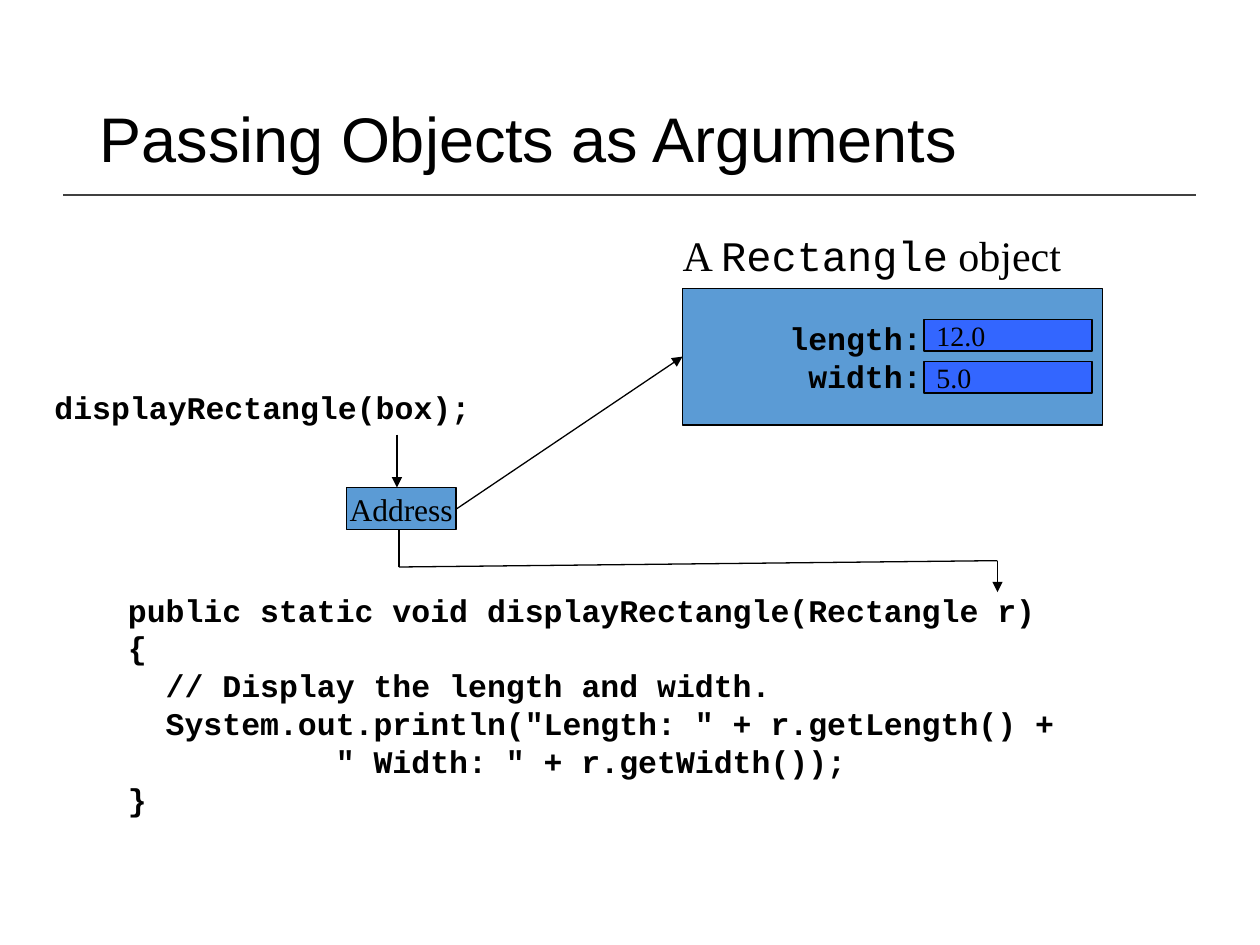
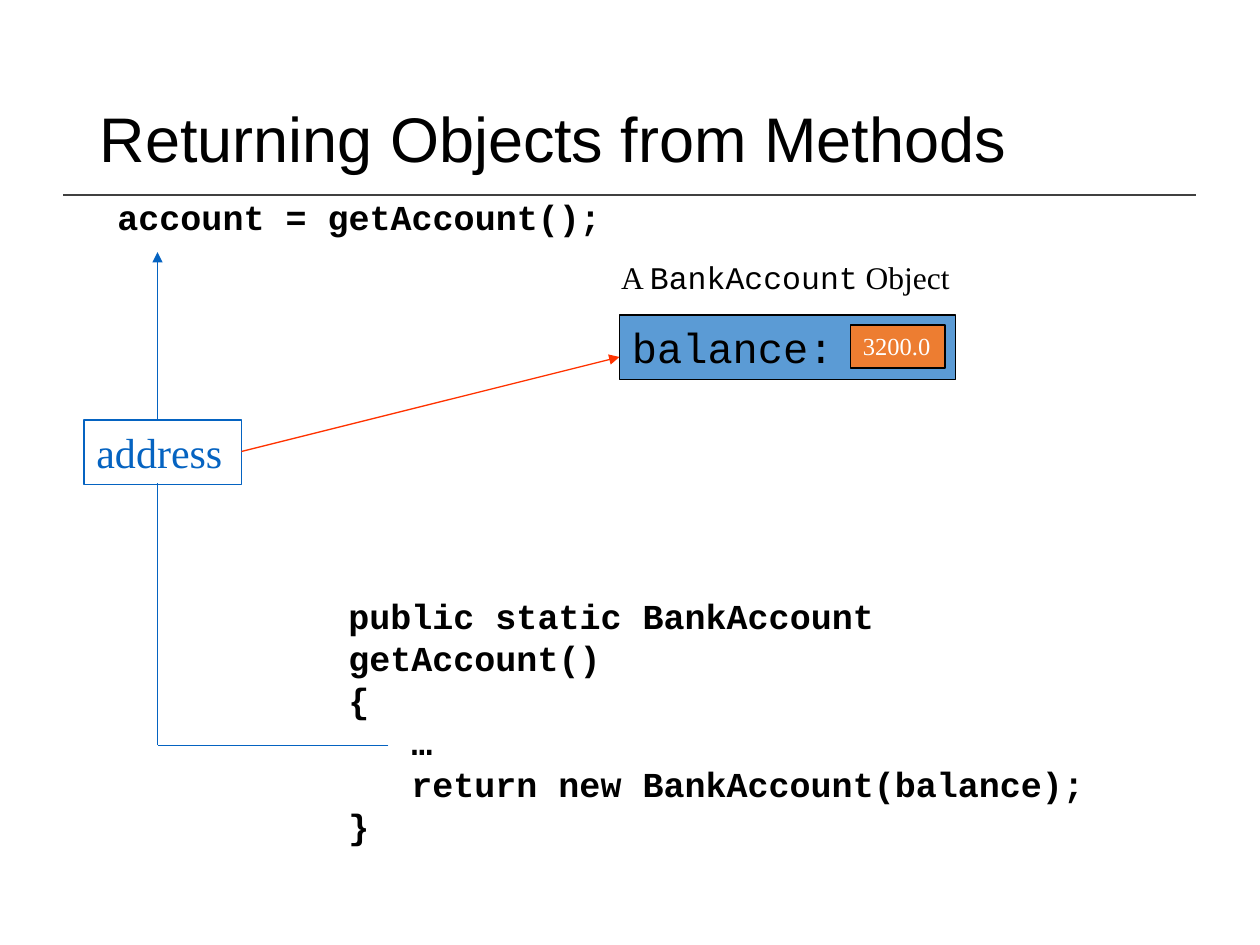
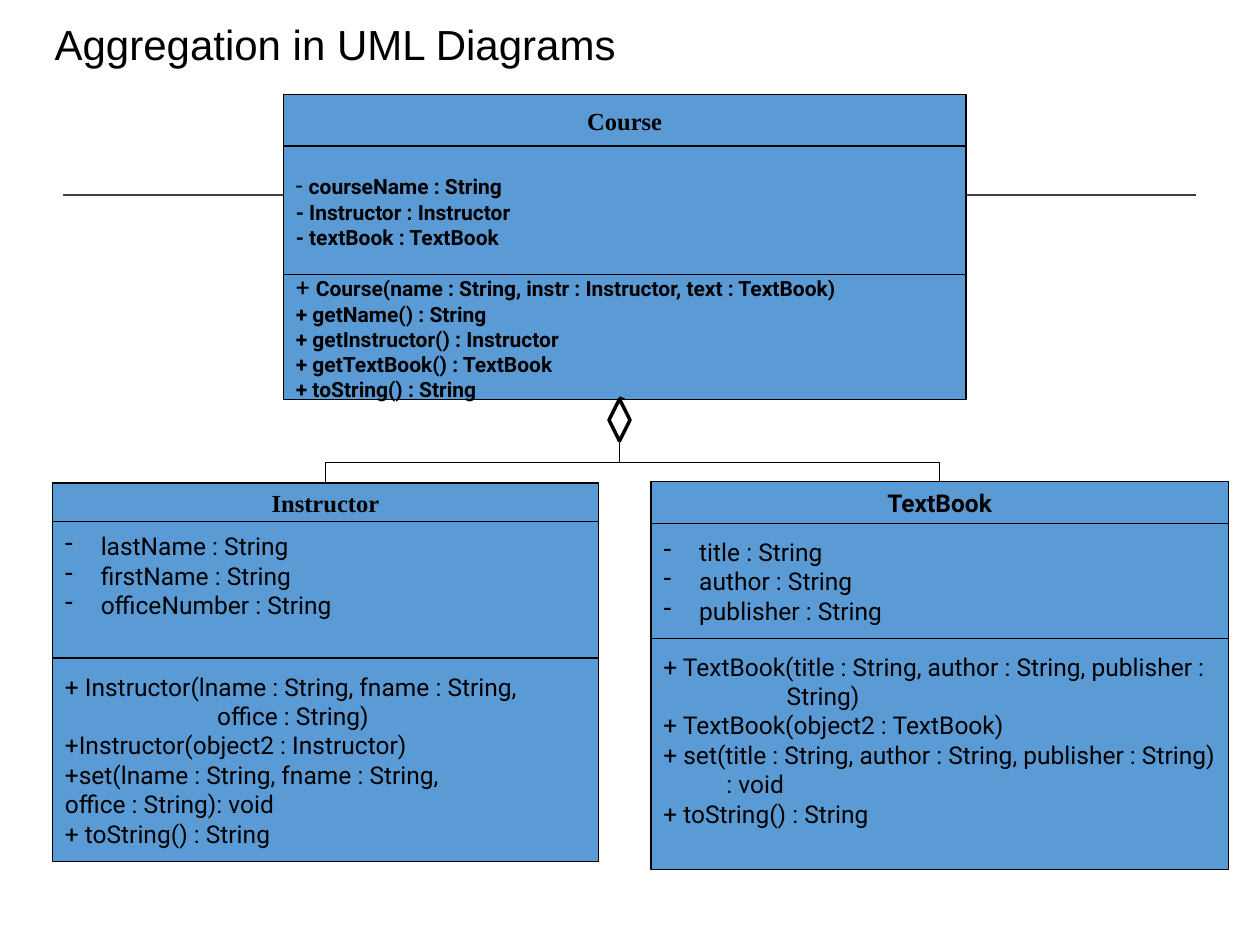
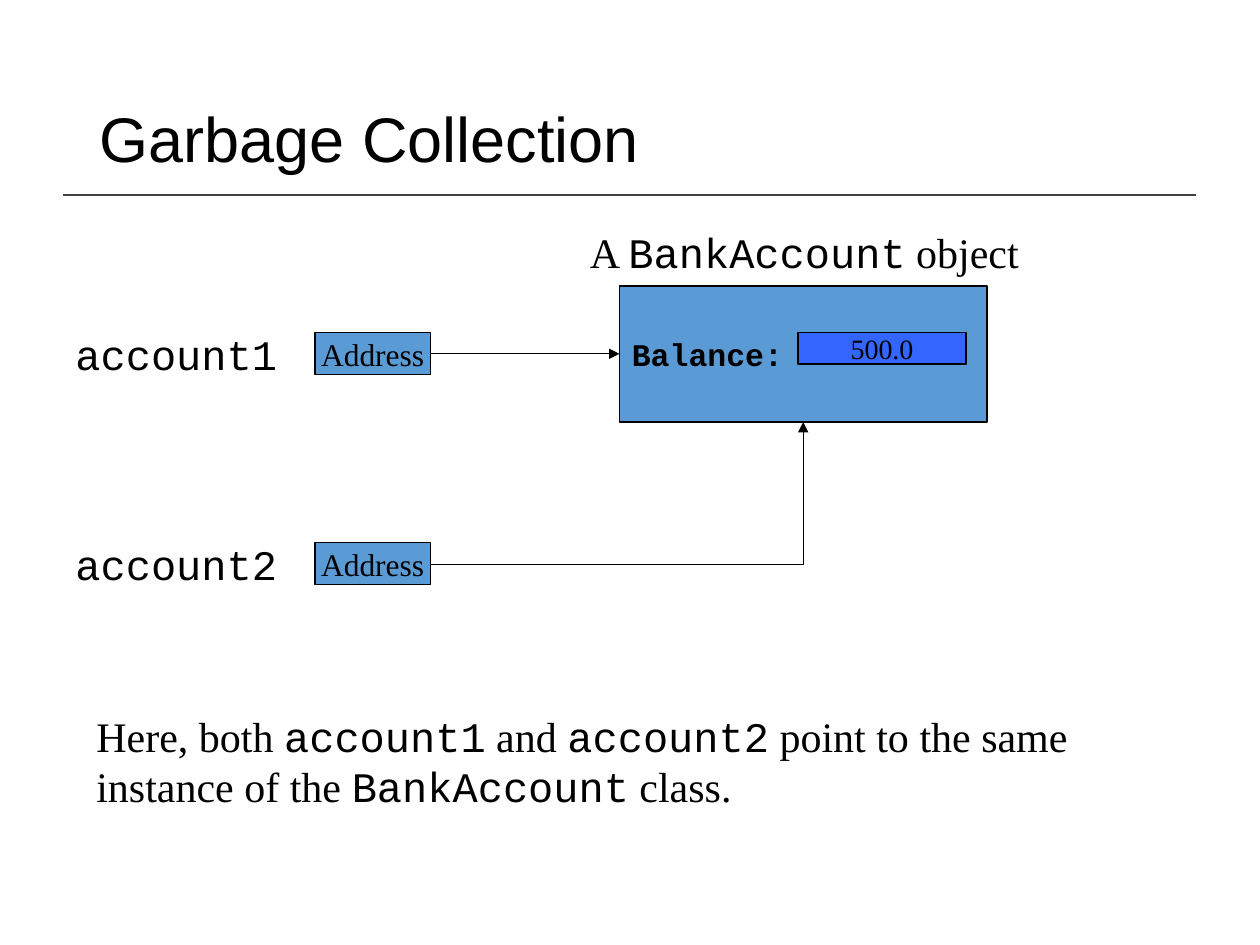
import pptx
import pptx.dml.color
import pptx.enum.shapes
import pptx.enum.text
import pptx.oxml.ns
import pptx.util
from lxml import etree

Pt = pptx.util.Pt
qn = pptx.oxml.ns.qn
SHAPE = pptx.enum.shapes.MSO_SHAPE
CONNECTOR = pptx.enum.shapes.MSO_CONNECTOR
ALIGN = pptx.enum.text.PP_ALIGN
ANCHOR = pptx.enum.text.MSO_ANCHOR
AUTO = pptx.enum.text.MSO_AUTO_SIZE

SANS, SERIF, MONO, UML = "Arial", "Times New Roman", "Courier New", "Roboto"
BLACK, WHITE, GREY = "000000", "FFFFFF", "404040"
BLUE, FIELD, LINK, ORANGE, RED = "5B9BD5", "3366FF", "0563C1", "ED7D31", "FF3300"
TITLE_ONLY = 5

CODE = dict(font=MONO, bold=True)
VALUE = dict(fill=FIELD, size=16, anchor=ANCHOR.MIDDLE)
CENTRED = dict(align=ALIGN.CENTER, anchor=ANCHOR.MIDDLE)
MEMBERS = dict(font=UML, size=14, anchor=ANCHOR.MIDDLE)


def rgb(value):
    return pptx.dml.color.RGBColor.from_string(value)


def code_runs(text):
    """Split text at backticks; the quoted pieces are set in the code font."""
    return [(piece, {"name": MONO} if i % 2 else {})
            for i, piece in enumerate(text.split("`")) if piece]


class Deck:
    def __init__(self):
        self.prs = pptx.Presentation()
        self.prs.slide_width, self.prs.slide_height = Pt(720), Pt(540)
        self.layout = self.prs.slide_layouts[TITLE_ONLY]
        self.s = None

    def slide(self, title, at=(49.7, 28.8, 620.6, 104.4), size=36):
        first = self.s is None
        self.s = self.prs.slides.add_slide(self.layout)
        if first:
            rule = self.line((36, 111.6), (683.3, 111.6), GREY, 1)
            self.layout.shapes.element.append(rule.element)
        sp = self.s.shapes.title
        sp.left, sp.top, sp.width, sp.height = map(Pt, at)
        self.set_text(sp, [title], size, SANS, anchor=ANCHOR.MIDDLE, wrap=True)
        sp.text_frame.paragraphs[0].line_spacing = 0.9

    def set_text(self, sp, paras, size=18, font=SERIF, bold=False, color=BLACK,
                 align=ALIGN.LEFT, anchor=ANCHOR.TOP, wrap=False, grow=False,
                 indents=None, bullet=None, bottom=3.6):
        """Fill a shape; a paragraph is a string or a list of (text, changes)."""
        tf = sp.text_frame
        frame = dict(word_wrap=wrap, vertical_anchor=anchor,
                     auto_size=AUTO.SHAPE_TO_FIT_TEXT if grow else AUTO.NONE,
                     margin_left=Pt(7.2), margin_right=Pt(7.2),
                     margin_top=Pt(3.6), margin_bottom=Pt(bottom))
        for name, value in frame.items():
            setattr(tf, name, value)
        for i, para in enumerate(paras):
            p = tf.add_paragraph() if i else tf.paragraphs[0]
            p.alignment = align
            indent = (indents or {}).get(i, 0)
            if bullet or indent:
                self.indent(p, indent, bullet)
            for text, changes in code_runs(para) if isinstance(para, str) else para:
                r = p.add_run()
                r.text = text
                r.font.color.rgb = rgb(color)
                style = dict(name=font, size=Pt(size), bold=bold) | changes
                for name, value in style.items():
                    setattr(r.font, name, value)

    def indent(self, p, left, bullet):
        pPr = p._p.get_or_add_pPr()
        hang = 20.5 if bullet else 0
        pPr.set("marL", str(int(Pt(left + hang))))
        pPr.set("indent", str(int(Pt(-hang))))
        if bullet:
            etree.SubElement(pPr, qn("a:buChar")).set("char", bullet)

    def label(self, at, paras, **style):
        sp = self.s.shapes.add_textbox(*map(Pt, at))
        self.set_text(sp, paras, **{"grow": True, **style})

    def box(self, at, paras=(), fill=None, line=BLACK, weight=0.75,
            kind=SHAPE.RECTANGLE, **style):
        sp = self.s.shapes.add_shape(kind, *map(Pt, at))
        sp.shadow.inherit = False
        if fill:
            sp.fill.solid()
            sp.fill.fore_color.rgb = rgb(fill)
        else:
            sp.fill.background()
        sp.line.color.rgb = rgb(line)
        sp.line.width = Pt(weight)
        self.set_text(sp, paras, **style)

    def line(self, start, end, color=BLACK, weight=0.75, arrow=False,
             kind=CONNECTOR.STRAIGHT):
        c = self.s.shapes.add_connector(kind, *map(Pt, (*start, *end)))
        c.line.color.rgb = rgb(color)
        c.line.width = Pt(weight)
        spPr = c.element.spPr
        if arrow:
            etree.SubElement(spPr.find(qn("a:ln")), qn("a:tailEnd")).set("type", "triangle")
        etree.SubElement(spPr, qn("a:effectLst"))
        return c

    def corner(self, start, end):
        """Arrow that runs across, then turns once."""
        c = self.line(start, end, arrow=True, kind=CONNECTOR.ELBOW)
        c.element.spPr.find(qn("a:prstGeom")).set("prst", "bentConnector2")

    def branch(self, start, end):
        """Elbow that runs down, across and down again: a turned connector."""
        (x1, y1), (x2, y2) = start, end
        cx, cy = (x1 + x2) / 2, (y1 + y2) / 2
        side = 1 if x2 > x1 else -1
        half_w, half_h = side * (y2 - y1) / 2, abs(x2 - x1) / 2
        c = self.line((cx + half_w, cy - half_h), (cx - half_w, cy + half_h),
                      kind=CONNECTOR.ELBOW)
        turn = 270 if side > 0 else 90
        c.element.spPr.find(qn("a:xfrm")).set("rot", str(turn * 60000))

    def uml_class(self, left, top, width, sections):
        """Stack the sections, each (height, paragraphs, style)."""
        for height, paras, style in sections:
            self.box((left, top, width, height), paras, BLUE, **style)
            top += height


def passing_objects(d):
    d.slide("Passing Objects as Arguments")
    d.label((24, 218.2, 258, 28.8), ["displayRectangle(box);"], wrap=True, **CODE)
    d.label((66, 334, 543.6, 136.8), [
        "public static void displayRectangle(Rectangle r)",
        "{",
        "// Display the length and width.",
        'System.out.println("Length: " + r.getLength() +',
        '" Width: " + r.getWidth());',
        "}"], indents={2: 21.6, 3: 21.6, 4: 118.8}, **CODE)
    d.label((383, 127.4, 231.8, 36), ["A `Rectangle` object"], size=24)
    d.box((390, 165, 240, 77.8), ["length:", "width:"], BLUE,
          anchor=ANCHOR.MIDDLE, indents={0: 54, 1: 64.8}, **CODE)
    for top, value in ((182.6, "12.0"), (206.6, "5.0")):
        d.box((528, top, 96, 18), [value], **VALUE)
    d.box((198, 278.6, 62.6, 24), ["Address"], BLUE, **CENTRED)
    d.line((226.8, 248.4), (226.8, 278.6), arrow=True)
    d.line((570, 320.4), (570, 338.4), arrow=True)
    d.line((228, 302.6), (228, 324))
    d.line((228, 324), (570, 320.4))
    d.line((260.6, 291), (390, 203.8), arrow=True)


def returning_objects(d):
    d.slide("Returning Objects from Methods")
    d.label((60, 108, 306, 31), ["account = getAccount();"], size=20, wrap=True, **CODE)
    d.label((192, 336.2, 468, 127.4), [
        "public static BankAccount getAccount()",
        "{",
        "…",
        "return new BankAccount(balance);",
        "}"], size=20, wrap=True, indents={2: 36, 3: 36}, **CODE)
    d.box((354, 180, 192, 36.7), ["balance:"], BLUE, size=24, font=MONO,
          wrap=True, grow=True)
    d.box((486, 185.8, 54, 24.5), ["3200.0"], ORANGE, size=14, color=WHITE, grow=True)
    d.box((48, 240, 90, 36.7), ["address"], line=LINK, color=LINK, size=24,
          wrap=True, grow=True)
    d.line((90, 240), (90, 144), LINK, arrow=True)
    d.line((222, 426), (90, 426), LINK)
    d.line((90, 426), (90, 276), LINK)
    d.line((138, 258), (354, 204), RED, arrow=True)
    d.label((347.8, 144, 203, 28.8), ["A `BankAccount` Object"])


def aggregation(d):
    d.slide("Aggregation in UML Diagrams", (24, 6, 678, 42), 24)
    name = dict(size=14, bold=True, **CENTRED)
    course = MEMBERS | dict(size=12, bold=True)
    sign = dict(size=Pt(14), bold=False)
    d.uml_class(162, 54, 390, [
        (29.4, ["Course"], name),
        (73.4, [[("- ", sign), ("courseName : String", {})],
                "- Instructor : Instructor",
                "- textBook : TextBook"], course),
        (71.4, [[("+ ", sign),
                 ("Course(name : String, instr : Instructor, text : TextBook)", {})],
                "+ getName() : String",
                "+ getInstructor() : Instructor",
                "+ getTextBook() : TextBook",
                "+ toString() : String"], course)])
    d.uml_class(372, 275, 330, [
        (24, ["TextBook"], name | dict(font=UML)),
        (66, ["title : String", "author : String", "publisher : String"],
         MEMBERS | dict(bullet="-")),
        (132, ["+ TextBook(title : String, author : String, publisher :",
               "String)",
               "+ TextBook(object2 : TextBook)",
               "+ set(title : String, author : String, publisher : String)",
               ": void",
               "+ toString() : String"],
         MEMBERS | dict(indents={1: 70.5, 4: 36}, bottom=20))])
    d.uml_class(30, 276, 312, [
        (22, ["Instructor"], name),
        (78, ["lastName : String", "firstName : String", "officeNumber : String"],
         MEMBERS | dict(bullet="-", bottom=20)),
        (116.4, ["+ Instructor(lname : String, fname : String,",
                 "office : String)",
                 "+Instructor(object2 : Instructor)",
                 "+set(lname : String, fname : String,",
                 "office : String): void",
                 "+ toString() : String"], MEMBERS | dict(indents={1: 87}))])
    d.box((348, 228, 12, 24), weight=2, kind=SHAPE.DIAMOND)
    d.line((357, 228), (354, 226.8))
    d.branch((354, 253), (537, 275.6))
    d.branch((354, 253), (186, 276))


def garbage_collection(d):
    d.slide("Garbage Collection")
    d.label((330, 126, 260.6, 36), ["A `BankAccount` object"], size=24)
    d.box((354, 163.4, 210, 77.8), ["Balance:"], BLUE, anchor=ANCHOR.MIDDLE, **CODE)
    d.box((456, 190, 96, 18), ["500.0"], **VALUE, align=ALIGN.CENTER)
    for i, account in enumerate(("account1", "account2")):
        top = 190 + 120 * i
        d.box((180, top, 66, 24), ["Address"], BLUE, **CENTRED)
        d.label((36, top - 5.6, 132, 36), [account], size=24, font=MONO, wrap=True)
    d.line((246, 202.2), (354, 202.2), arrow=True)
    d.corner((246, 322.4), (459, 241.2))
    d.label((48, 402.4, 569.6, 64.8), [
        "Here, both `account1` and `account2` point to the same",
        "instance of the `BankAccount` class."], size=24)


def main():
    d = Deck()
    for build in (passing_objects, returning_objects, aggregation, garbage_collection):
        build(d)
    d.prs.save("out.pptx")


if __name__ == "__main__":
    main()
